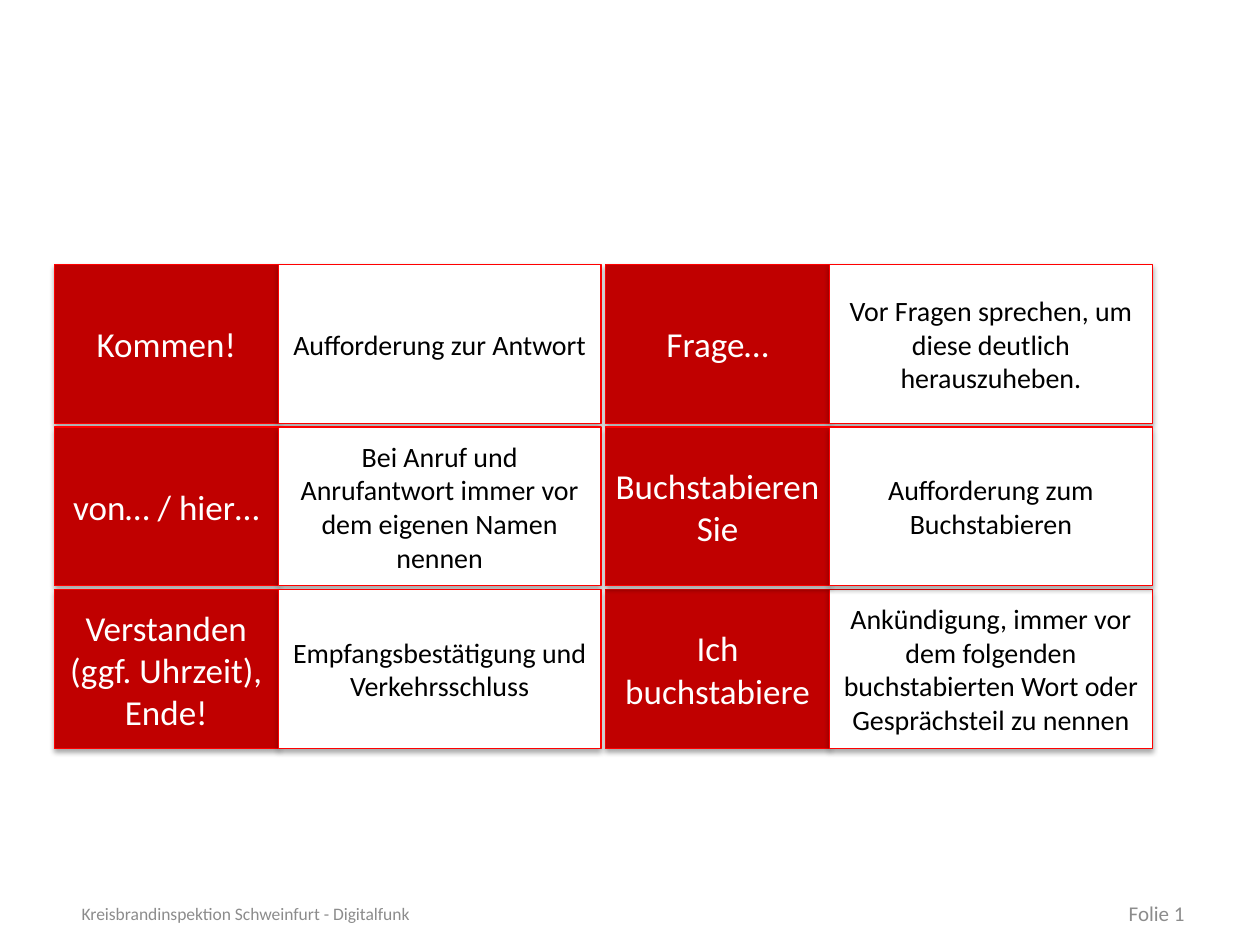
"""Build a slide of radio phrases paired with their meanings."""
from dataclasses import dataclass

from lxml.etree import SubElement
from pptx import Presentation
from pptx.dml.color import RGBColor
from pptx.enum.shapes import MSO_SHAPE
from pptx.enum.text import MSO_ANCHOR, PP_ALIGN
from pptx.oxml.ns import qn
from pptx.shapes.autoshape import Shape
from pptx.shapes.group import GroupShape
from pptx.slide import Slide
from pptx.util import Inches, Pt

RED, BORDER, WHITE, BLACK, GREY = "C00000", "FF0000", "FFFFFF", "000000", "8C8C8C"
LEFT, TOP = 0.43, 2.1
PHRASE_WIDTH, MEANING_WIDTH, CARD_HEIGHT = 1.78, 2.56, 1.26
COLUMN_STEP, ROW_STEP = 4.375, 1.29


@dataclass
class Card:
    column: int
    row: int
    phrase: str
    meaning: str


CARDS = [
    Card(1, 2, "Ich buchstabiere",
         "Ankündigung, immer vor dem folgenden buchstabierten Wort oder Gesprächsteil zu nennen"),
    Card(0, 0, "Kommen!", "Aufforderung zur Antwort"),
    Card(0, 1, "von… / hier…", "Bei Anruf und Anrufantwort immer vor dem eigenen Namen nennen"),
    Card(0, 2, "Verstanden (ggf. Uhrzeit), Ende!", "Empfangsbestätigung und Verkehrsschluss"),
    Card(1, 0, "Frage…", "Vor Fragen sprechen, um diese deutlich herauszuheben."),
    Card(1, 1, "Buchstabieren Sie", "Aufforderung zum Buchstabieren"),
]


def color(value: str) -> RGBColor:
    return RGBColor.from_string(value)


def write_text(shape: Shape, text: str, *, size: float, font_color: str,
               align: PP_ALIGN = PP_ALIGN.CENTER, side: float = 0.1, edge: float = 0.05) -> None:
    frame = shape.text_frame
    frame.word_wrap = True
    frame.vertical_anchor = MSO_ANCHOR.MIDDLE
    frame.margin_left = frame.margin_right = Inches(side)
    frame.margin_top = frame.margin_bottom = Inches(edge)
    paragraph = frame.paragraphs[0]
    paragraph.text = text
    paragraph.alignment = align
    paragraph.font.name = "Calibri"
    paragraph.font.size = Pt(size)
    paragraph.font.color.rgb = color(font_color)


def add_shadow(shape: Shape) -> None:
    shape.shadow.inherit = False
    effects = shape._element.spPr.find(qn("a:effectLst"))
    shadow = SubElement(effects, qn("a:outerShdw"), blurRad=str(Pt(3.1)), dist=str(Pt(1.8)),
                        dir="5400000", rotWithShape="0")
    shade = SubElement(shadow, qn("a:srgbClr"), val=BLACK)
    SubElement(shade, qn("a:alpha"), val="35000")


def add_panel(group: GroupShape, left: float, top: float, width: float, fill: str) -> Shape:
    panel = group.shapes.add_shape(MSO_SHAPE.RECTANGLE, Inches(left), Inches(top),
                                   Inches(width), Inches(CARD_HEIGHT))
    panel.fill.solid()
    panel.fill.fore_color.rgb = color(fill)
    panel.line.color.rgb = color(BORDER)
    panel.line.width = Pt(0.75)
    add_shadow(panel)
    return panel


def add_card(slide: Slide, card: Card) -> None:
    left = LEFT + card.column * COLUMN_STEP
    top = TOP + card.row * ROW_STEP
    group = slide.shapes.add_group_shape()
    phrase = add_panel(group, left, top, PHRASE_WIDTH, RED)
    write_text(phrase, card.phrase, size=20, font_color=WHITE, side=0.04, edge=0.04)
    meaning = add_panel(group, left + PHRASE_WIDTH, top, MEANING_WIDTH, WHITE)
    write_text(meaning, card.meaning, size=16, font_color=BLACK)


def add_footer(slide: Slide, text: str, left: float, width: float, size: float,
               align: PP_ALIGN) -> None:
    box = slide.shapes.add_textbox(Inches(left), Inches(7.15), Inches(width), Inches(0.2))
    write_text(box, text, size=size, font_color=GREY, align=align, edge=0)


def main() -> None:
    presentation = Presentation()
    presentation.slide_width = Inches(10)
    presentation.slide_height = Inches(7.5)
    slide = presentation.slides.add_slide(presentation.slide_layouts[6])
    add_footer(slide, "Kreisbrandinspektion Schweinfurt - Digitalfunk", 0.55, 6.04, 10, PP_ALIGN.LEFT)
    add_footer(slide, "Folie 1", 7.17, 2.33, 12, PP_ALIGN.RIGHT)
    for card in CARDS:
        add_card(slide, card)
    presentation.save("out.pptx")


if __name__ == "__main__":
    main()
